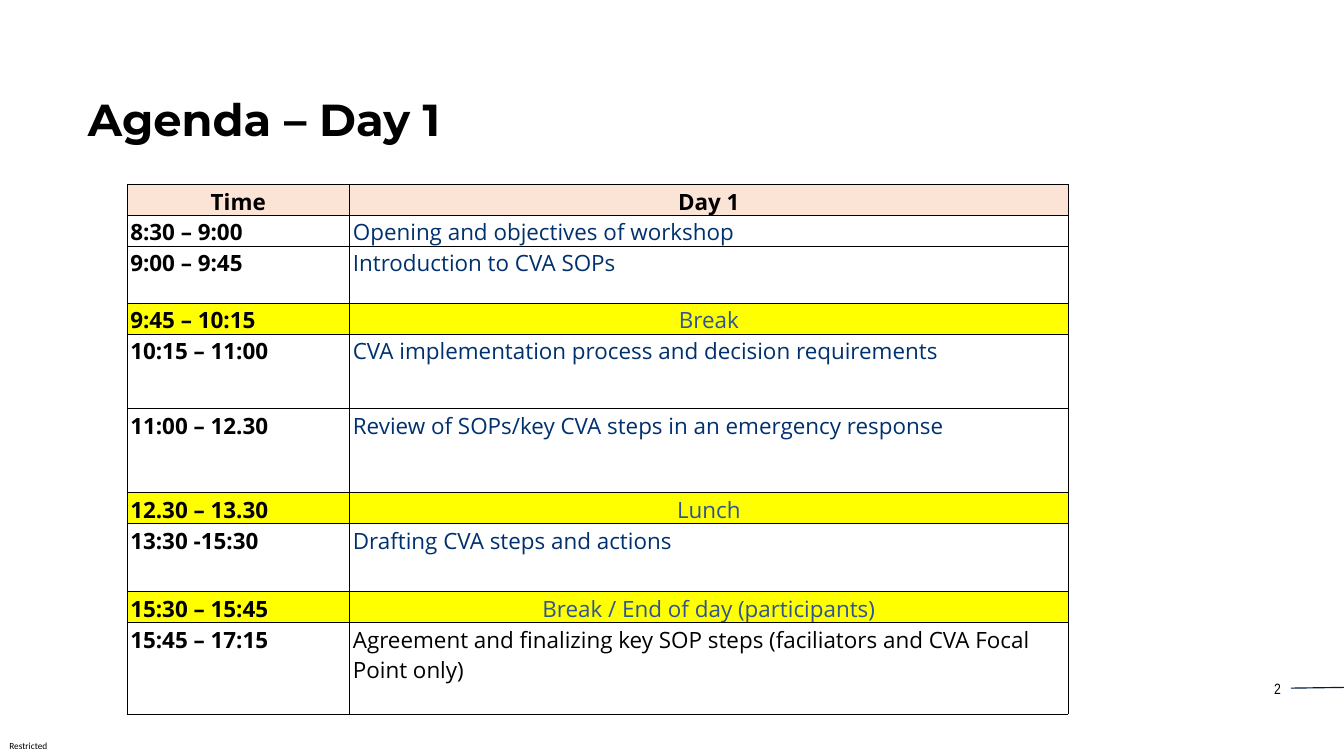
from pptx import Presentation
from pptx.dml.color import RGBColor
from pptx.enum.text import MSO_ANCHOR, PP_ALIGN
from pptx.oxml import parse_xml
from pptx.oxml.ns import nsdecls
from pptx.util import Pt
from lxml import etree

TOP, MIDDLE = MSO_ANCHOR.TOP, MSO_ANCHOR.MIDDLE
LEFT, CENTER, RIGHT = PP_ALIGN.LEFT, PP_ALIGN.CENTER, PP_ALIGN.RIGHT

BLACK, NAVY, BLUE, LINE_NAVY = "000000", "00316E", "2F5496", "001D41"
PEACH, YELLOW, WHITE = "FBE4D5", "FFFF00", "FFFFFF"

# Content: kind, time, activity, row height
TITLE = "Agenda – Day 1"
AGENDA = [
    ("header", "Time", "Day 1", 33),
    ("session", "8:30 – 9:00", "Opening and objectives of workshop", 33),
    ("session", "9:00 – 9:45", "Introduction to CVA SOPs", 61),
    ("break", "9:45 – 10:15", "Break", 33),
    ("open", "10:15 – 11:00",
     "CVA implementation process and decision requirements", 80),
    ("open", "11:00 – 12.30",
     "Review of SOPs/key CVA steps in an emergency response", 90),
    ("break", "12.30 – 13.30", "Lunch", 33),
    ("session", "13:30 -15:30", "Drafting CVA steps and actions", 73),
    ("break", "15:30 – 15:45", "Break / End of day (participants)", 33),
    ("closing", "15:45 – 17:15",
     "Agreement and finalizing key SOP steps "
     "(faciliators and CVA Focal Point only)", 98),
]
# Kind: fill, activity colour, activity alignment
STYLES = {
    "header": (PEACH, BLACK, CENTER),
    "session": (WHITE, NAVY, LEFT),
    "open": (None, NAVY, LEFT),
    "break": (YELLOW, BLUE, CENTER),
    "closing": (WHITE, BLACK, LEFT),
}
COLUMN_WIDTHS = (238.5, 770)
TABLE_LEFT, TABLE_TOP = 136, 197.2


def colour(value):
    return RGBColor.from_string(value)


def write(frame, text, font, size, shade, bold=False, align=LEFT):
    frame.text = text
    para = frame.paragraphs[0]
    para.alignment = align
    for span in para.runs:
        span.font.name = font
        span.font.size = Pt(size)
        span.font.bold = bold
        span.font.color.rgb = colour(shade)
    return para


def place(shape, left, top, width, height):
    shape.left, shape.top = Pt(left), Pt(top)
    shape.width, shape.height = Pt(width), Pt(height)


def add_label(page, area, text, font, size, align, anchor):
    box = page.shapes.add_textbox(*(Pt(value) for value in area))
    frame = box.text_frame
    frame.word_wrap = True
    frame.vertical_anchor = anchor
    write(frame, text, font, size, BLACK, align=align)
    return frame


def add_borders(cell):
    properties = cell._tc.get_or_add_tcPr()
    for index, side in enumerate(("lnL", "lnR", "lnT", "lnB")):
        properties.insert(index, parse_xml(
            f'<a:{side} {nsdecls("a")} w="{Pt(0.5)}"><a:solidFill>'
            f'<a:srgbClr val="{BLACK}"/></a:solidFill></a:{side}>'))


def fill_cell(cell, text, fill, shade, bold, align, anchor):
    cell.margin_left = cell.margin_right = Pt(3.6)
    cell.margin_top = cell.margin_bottom = Pt(2.16)
    cell.vertical_anchor = anchor
    para = write(cell.text_frame, text, "Open Sans", 24, shade, bold, align)
    para.space_after = Pt(10)
    if fill:
        cell.fill.solid()
        cell.fill.fore_color.rgb = colour(fill)
    else:
        cell.fill.background()
    add_borders(cell)


def add_agenda(page):
    height = sum(row[3] for row in AGENDA)
    table = page.shapes.add_table(
        len(AGENDA), len(COLUMN_WIDTHS), Pt(TABLE_LEFT), Pt(TABLE_TOP),
        Pt(sum(COLUMN_WIDTHS)), Pt(height)).table
    table.horz_banding = False
    for column, width in zip(table.columns, COLUMN_WIDTHS):
        column.width = Pt(width)
    for row, (kind, time, activity, row_height) in zip(table.rows, AGENDA):
        row.height = Pt(row_height)
        fill, shade, align = STYLES[kind]
        header = kind == "header"
        anchor = MIDDLE if header else TOP
        time_cell, activity_cell = row.cells
        fill_cell(time_cell, time, fill, BLACK, True,
                  CENTER if header else LEFT, anchor)
        fill_cell(activity_cell, activity, fill, shade, header, align, anchor)


def main():
    deck = Presentation()
    deck.slide_width, deck.slide_height = Pt(1440), Pt(810)
    page = deck.slides.add_slide(deck.slide_layouts[5])

    # Title
    title = page.shapes.title
    place(title, 87, 95, 476, 65.5)
    title.text_frame.vertical_anchor = TOP
    write(title.text_frame, TITLE, "Montserrat", 48, BLACK, True)

    # Footer: classification, page number and rule
    marking = add_label(page, (0, 789, 63.4, 21), "Restricted", "Calibri",
                        10, LEFT, MIDDLE)
    marking.margin_left = Pt(10)
    marking.margin_right = marking.margin_top = marking.margin_bottom = 0
    add_label(page, (1327.7, 724.3, 51.8, 26.6), "2", "Arial Narrow",
              16, RIGHT, TOP)
    rule = page.shapes.add_connector(
        1, Pt(1383), Pt(737.3), Pt(1440), Pt(736.5))
    rule.line.color.rgb = colour(LINE_NAVY)
    rule.line.width = Pt(1.25)
    etree.SubElement(
        rule._element.spPr,
        "{http://schemas.openxmlformats.org/drawingml/2006/main}effectLst")

    add_agenda(page)
    deck.save("out.pptx")


if __name__ == "__main__":
    main()
